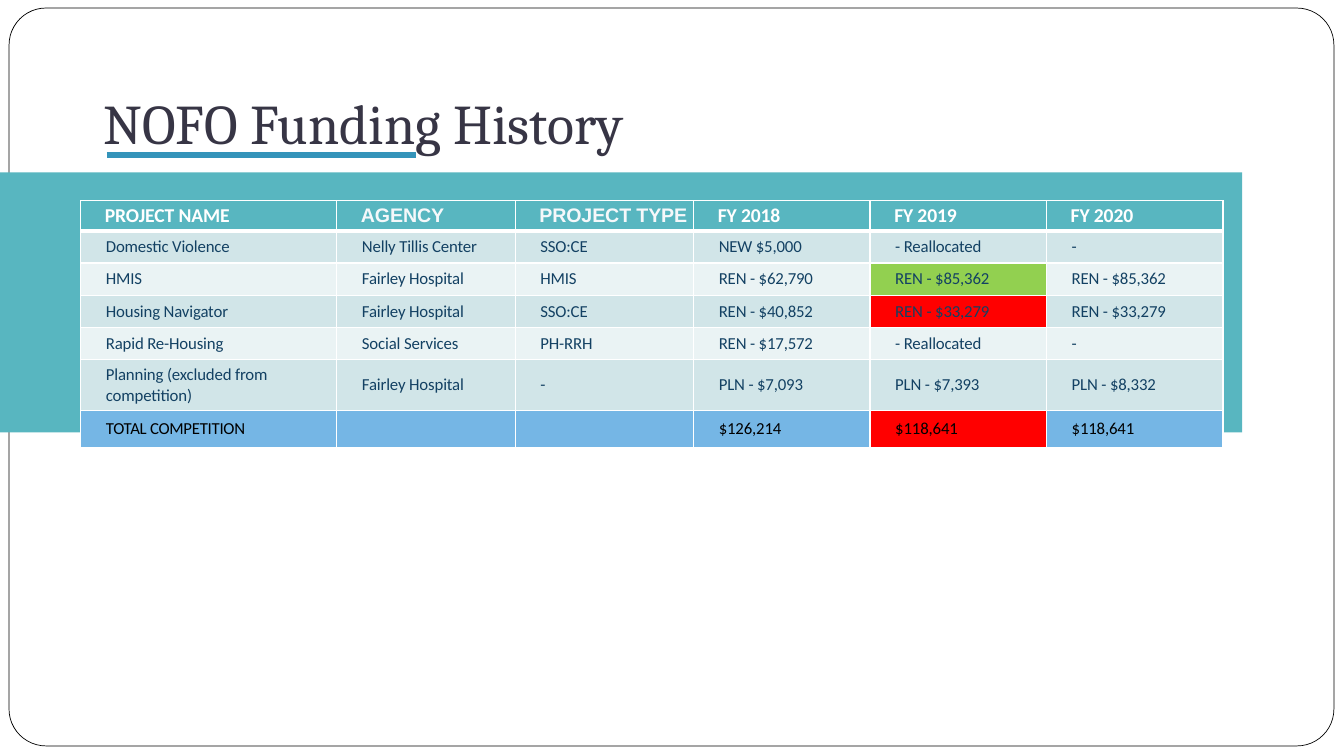
from lxml import etree
from pptx import Presentation
from pptx.dml.color import RGBColor
from pptx.enum.shapes import MSO_CONNECTOR, MSO_SHAPE
from pptx.enum.text import MSO_ANCHOR
from pptx.oxml.ns import qn
from pptx.util import Inches, Pt

ROUNDED, RECT = MSO_SHAPE.ROUNDED_RECTANGLE, MSO_SHAPE.RECTANGLE
STRAIGHT = MSO_CONNECTOR.STRAIGHT
MIDDLE, BOTTOM = MSO_ANCHOR.MIDDLE, MSO_ANCHOR.BOTTOM

WHITE = RGBColor(0xFF, 0xFF, 0xFF)
BLACK = RGBColor(0x00, 0x00, 0x00)
TEAL = RGBColor(0x58, 0xB6, 0xC0)
TITLE_INK = RGBColor(0x37, 0x35, 0x45)
UNDERLINE = RGBColor(0x34, 0x94, 0xBA)
OFF_WHITE = RGBColor(0xF5, 0xF8, 0xFA)
BODY_INK = RGBColor(0x13, 0x41, 0x63)
BAND_DARK = RGBColor(0xD1, 0xE5, 0xE8)
BAND_LIGHT = RGBColor(0xEA, 0xF3, 0xF4)
TOTAL_BLUE = RGBColor(0x75, 0xB6, 0xE5)
GREEN = RGBColor(0x92, 0xD0, 0x50)
RED = RGBColor(0xFF, 0x00, 0x00)

COL_WIDTHS = [2.54, 1.77, 1.77, 1.75, 1.75, 1.75]
ROW_HEIGHTS = [0.3, 0.32, 0.32, 0.32, 0.32, 0.5, 0.37]
FUNDING = [
    ["PROJECT NAME", "AGENCY", "PROJECT TYPE", "FY 2018", "FY 2019", "FY 2020"],
    ["Domestic Violence", "Nelly Tillis Center", "SSO:CE", "NEW $5,000", "- Reallocated", "-"],
    ["HMIS", "Fairley Hospital", "HMIS", "REN - $62,790", "REN - $85,362", "REN - $85,362"],
    ["Housing Navigator", "Fairley Hospital", "SSO:CE", "REN - $40,852", "REN - $33,279",
     "REN - $33,279"],
    ["Rapid Re-Housing", "Social Services", "PH-RRH", "REN - $17,572", "- Reallocated", "-"],
    ["Planning (excluded from competition)", "Fairley Hospital", "-", "PLN - $7,093",
     "PLN - $7,393", "PLN - $8,332"],
    ["TOTAL COMPETITION", "", "", "$126,214", "$118,641", "$118,641"],
]
HIGHLIGHTS = {(2, 4): GREEN, (3, 4): RED, (6, 4): RED}
TOTAL_ROW = len(FUNDING) - 1

# Text formats by kind of row
NO_MARGINS = dict.fromkeys(["left", "top", "right", "bottom"], 0)
HEADER = {"size": 14, "bold": True, "color": WHITE, "indent": 0.24, "before": 7.8,
          "spacing": -10, "margins": NO_MARGINS}
BODY = {"size": 12, "bold": False, "color": BODY_INK, "indent": 0.25, "before": 3.4,
        "spacing": -10, "margins": {"left": 0, "top": 0.05, "right": 0.1, "bottom": 0.05}}
TOTAL = {"size": 12, "bold": False, "color": BLACK, "indent": 0.25, "before": 3.7,
         "spacing": -10, "margins": NO_MARGINS}


def set_margins(target, margins):
    for side, inches in margins.items():
        setattr(target, f"margin_{side}", Inches(inches))


def add_run(p, text, font, size, color, bold=False):
    r = p.add_run()
    r.text = text
    for name, value in {"name": font, "size": Pt(size), "bold": bold}.items():
        setattr(r.font, name, value)
    r.font.color.rgb = color
    return r


def add_block(s, kind, box, fill, line=None):
    sp = s.shapes.add_shape(kind, *map(Inches, box))
    sp.shadow.inherit = False
    sp.fill.solid()
    sp.fill.fore_color.rgb = fill
    if line is None:
        sp.line.fill.background()
    else:
        sp.line.color.rgb = line
        sp.line.width = Pt(0.5)
    return sp


def add_title(s, text, box):
    tf = s.shapes.add_textbox(*map(Inches, box)).text_frame
    tf.word_wrap = True
    tf.vertical_anchor = BOTTOM
    set_margins(tf, {"left": 0.1, "top": 0.05, "right": 0.1, "bottom": 0.1})
    add_run(tf.paragraphs[0], text, "Cambria", 40, TITLE_INK)


def add_underline(s, x1, x2, y):
    line = s.shapes.add_connector(STRAIGHT, Inches(x1), Inches(y), Inches(x2), Inches(y))
    line.line.color.rgb = UNDERLINE
    line.line.width = Pt(4.32)
    etree.SubElement(line._element.spPr, qn("a:effectLst"))


def set_borders(cell, widths):
    tcPr = cell._tc.get_or_add_tcPr()
    for side, points in widths.items():
        ln = etree.SubElement(tcPr, qn(f"a:ln{side}"), w=str(Pt(points)))
        fill = etree.SubElement(ln, qn("a:solidFill"))
        etree.SubElement(fill, qn("a:srgbClr"), val=str(WHITE))


def row_style(row):
    if row == 0:
        return HEADER, TEAL
    if row == TOTAL_ROW:
        return TOTAL, TOTAL_BLUE
    return BODY, BAND_DARK if row % 2 else BAND_LIGHT


def fill_cell(cell, row, col, text):
    style, fill = row_style(row)
    # Borders come before the fill; the rule under the header is thicker
    set_borders(cell, {"L": 1, "R": 1, "T": 3 if row == 1 else 1, "B": 3 if row == 0 else 1})
    cell.fill.solid()
    cell.fill.fore_color.rgb = HIGHLIGHTS.get((row, col), fill)
    cell.vertical_anchor = MIDDLE
    set_margins(cell, style["margins"])
    if not text:
        return
    p = cell.text_frame.paragraphs[0]
    p.space_before = Pt(style["before"])
    pPr = p._p.get_or_add_pPr()
    pPr.set("marL", str(Inches(style["indent"])))
    pPr.set("indent", "0")
    font, color = "Calibri", style["color"]
    if row == 0 and col in (1, 2):
        font, color = "Arial", OFF_WHITE
    r = add_run(p, text, font, style["size"], color, style["bold"])
    spacing = -20 if (row, col) == (TOTAL_ROW, 0) else style["spacing"]
    r.font._element.set("spc", str(spacing))


def add_funding_table(s, left, top):
    frame = s.shapes.add_table(len(ROW_HEIGHTS), len(COL_WIDTHS), Inches(left), Inches(top),
                               Inches(sum(COL_WIDTHS)), Inches(sum(ROW_HEIGHTS)))
    table = frame.table
    for column, width in zip(table.columns, COL_WIDTHS):
        column.width = Inches(width)
    for row, height in zip(table.rows, ROW_HEIGHTS):
        row.height = Inches(height)
    for i, texts in enumerate(FUNDING):
        for j, text in enumerate(texts):
            fill_cell(table.cell(i, j), i, j, text)


def main():
    prs = Presentation()
    prs.slide_width, prs.slide_height = Inches(13.33), Inches(7.5)
    s = prs.slides.add_slide(prs.slide_layouts[6])

    # Page frame and teal band
    page = add_block(s, ROUNDED, (0.09, 0.08, 13.14, 7.32), WHITE, BLACK)
    page.adjustments[0] = 0.05
    add_block(s, RECT, (0, 1.71, 12.32, 2.58), TEAL)

    # Title, funding table and title underline
    add_title(s, "NOFO Funding History", (0.93, 0.19, 11.5, 1.45))
    add_funding_table(s, 0.8, 1.99)
    add_underline(s, 1.06, 4.13, 1.54)

    prs.save("out.pptx")


if __name__ == "__main__":
    main()
